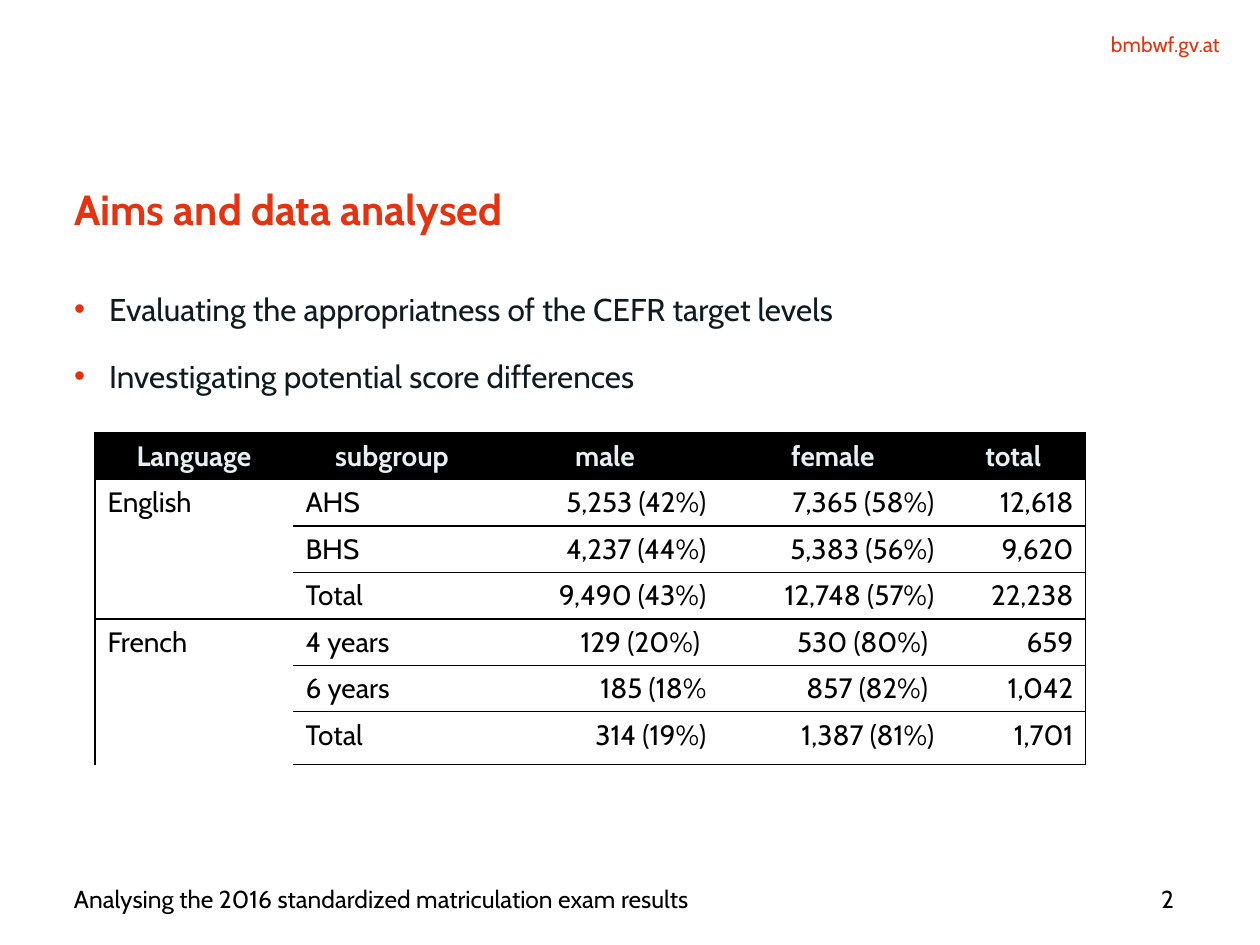
"""Build the slide on the aims and data of the 2016 exam analysis."""
import pptx
import pptx.util
import pptx.dml.color
import pptx.enum.text
import pptx.oxml.ns
import lxml.etree

PX = 914400 / 126
FONT = "Cabin"
HUES = {"red": "E6320F", "ink": "0F1B20", "black": "000000", "pale": "E6EFF3"}
ALIGN = pptx.enum.text.PP_ALIGN
ANCHOR = pptx.enum.text.MSO_ANCHOR
qn = pptx.oxml.ns.qn


def px(*nums):
    return [pptx.util.Emu(round(num * PX)) for num in nums]


def write(para, text, size, hue, bold=False, align=ALIGN.LEFT):
    para.alignment = align
    run = para.add_run()
    run.text = text
    run.font.name = FONT
    run.font.size = pptx.util.Pt(size)
    run.font.bold = bold
    run.font.color.rgb = pptx.dml.color.RGBColor.from_string(HUES[hue])


deck = pptx.Presentation()
deck.slide_width, deck.slide_height = px(1260, 945)
slide = deck.slides.add_slide(deck.slide_layouts[5])

title = slide.shapes.title
title.left, title.top, title.width, title.height = px(74, 181, 1100, 115)
body = slide.shapes.add_textbox(*px(74, 286, 1100, 541))
site = slide.shapes.add_textbox(*px(916, 32, 304, 25))
foot = slide.shapes.add_textbox(*px(74, 880, 948, 37))
page = slide.shapes.add_textbox(*px(1062, 880, 112, 37))
for box in (title, body, site, foot, page):
    frame = box.text_frame
    frame.margin_left = frame.margin_right = 0
    frame.margin_top = frame.margin_bottom = 0
    frame.word_wrap = True
    frame.auto_size = pptx.enum.text.MSO_AUTO_SIZE.NONE
    frame.vertical_anchor = ANCHOR.MIDDLE if box in (foot, page) else ANCHOR.TOP

head = title.text_frame.paragraphs[0]
head.line_spacing = pptx.util.Pt(30)
write(head, "Aims and data analysed", 24, "red", True)
write(site.text_frame.paragraphs[0], "bmbwf.gv.at", 12, "red", align=ALIGN.RIGHT)
write(foot.text_frame.paragraphs[0],
      "Analysing the 2016 standardized matriculation exam results", 14, "black")
write(page.text_frame.paragraphs[0], "2", 14, "black", align=ALIGN.RIGHT)

aims = ["Evaluating the appropriatness of the CEFR target levels",
        "Investigating potential score differences"]
for i, aim in enumerate(aims):
    para = body.text_frame.add_paragraph() if i else body.text_frame.paragraphs[0]
    props = para._p.get_or_add_pPr()
    dent = px(35)[0]
    props.set("marL", str(dent))
    props.set("indent", str(-dent))
    tint = lxml.etree.SubElement(props, qn("a:buClr"))
    lxml.etree.SubElement(tint, qn("a:srgbClr")).set("val", HUES["red"])
    lxml.etree.SubElement(props, qn("a:buFont")).set("typeface", "Arial")
    lxml.etree.SubElement(props, qn("a:buChar")).set("char", "•")
    para.line_spacing = pptx.util.Pt(24)
    para.space_after = pptx.util.Pt(14.2)
    write(para, aim, 18, "ink")

rows = [
    ["Language", "subgroup", "male", "female", "total "],
    ["English", "AHS", "5,253 (42%)", "7,365 (58%)", "12,618"],
    ["", "BHS", "4,237 (44%)", "5,383 (56%)", "9,620"],
    ["", "Total", "9,490 (43%)", "12,748 (57%)", "22,238"],
    ["French", "4 years", "129 (20%) ", "530 (80%) ", "659"],
    ["", "6 years", "185 (18%", "857 (82%) ", "1,042"],
    ["", "Total", "314 (19%)", "1,387 (81%)", "1,701"],
]
wides = [198, 198, 228, 228, 139]
highs = [46] * 6 + [53]
table = slide.shapes.add_table(
    len(rows), len(wides), *px(95, 433, sum(wides), sum(highs))).table
table.first_row = table.horz_banding = False
for col, wide in zip(table.columns, wides):
    col.width = px(wide)[0]
for row, high in zip(table.rows, highs):
    row.height = px(high)[0]
for top in (1, 4):
    table.cell(top, 0).merge(table.cell(top + 2, 0))

for r, row in enumerate(rows):
    for c, text in enumerate(row):
        cell = table.cell(r, c)
        props = cell._tc.get_or_add_tcPr()
        edges = {"L": c == 0, "R": c == 4,
                 "T": c > 0 or r in (0, 1, 4), "B": c > 0 or r in (0, 3, 6)}
        for side, shown in edges.items():
            line = lxml.etree.SubElement(props, qn("a:ln" + side))
            line.set("w", str(pptx.util.Pt(0.75)))
            if shown:
                fill = lxml.etree.SubElement(line, qn("a:solidFill"))
                lxml.etree.SubElement(fill, qn("a:srgbClr")).set("val", HUES["black"])
            else:
                lxml.etree.SubElement(line, qn("a:noFill"))
        if r == 0:
            cell.fill.solid()
            cell.fill.fore_color.rgb = pptx.dml.color.RGBColor.from_string(HUES["black"])
            align = ALIGN.CENTER
        else:
            cell.fill.background()
            align = ALIGN.RIGHT if c > 1 else ALIGN.LEFT
        if text:
            hue = "black" if r else "pale"
            write(cell.text_frame.paragraphs[0], text, 16, hue, r == 0, align)

deck.save("out.pptx")
